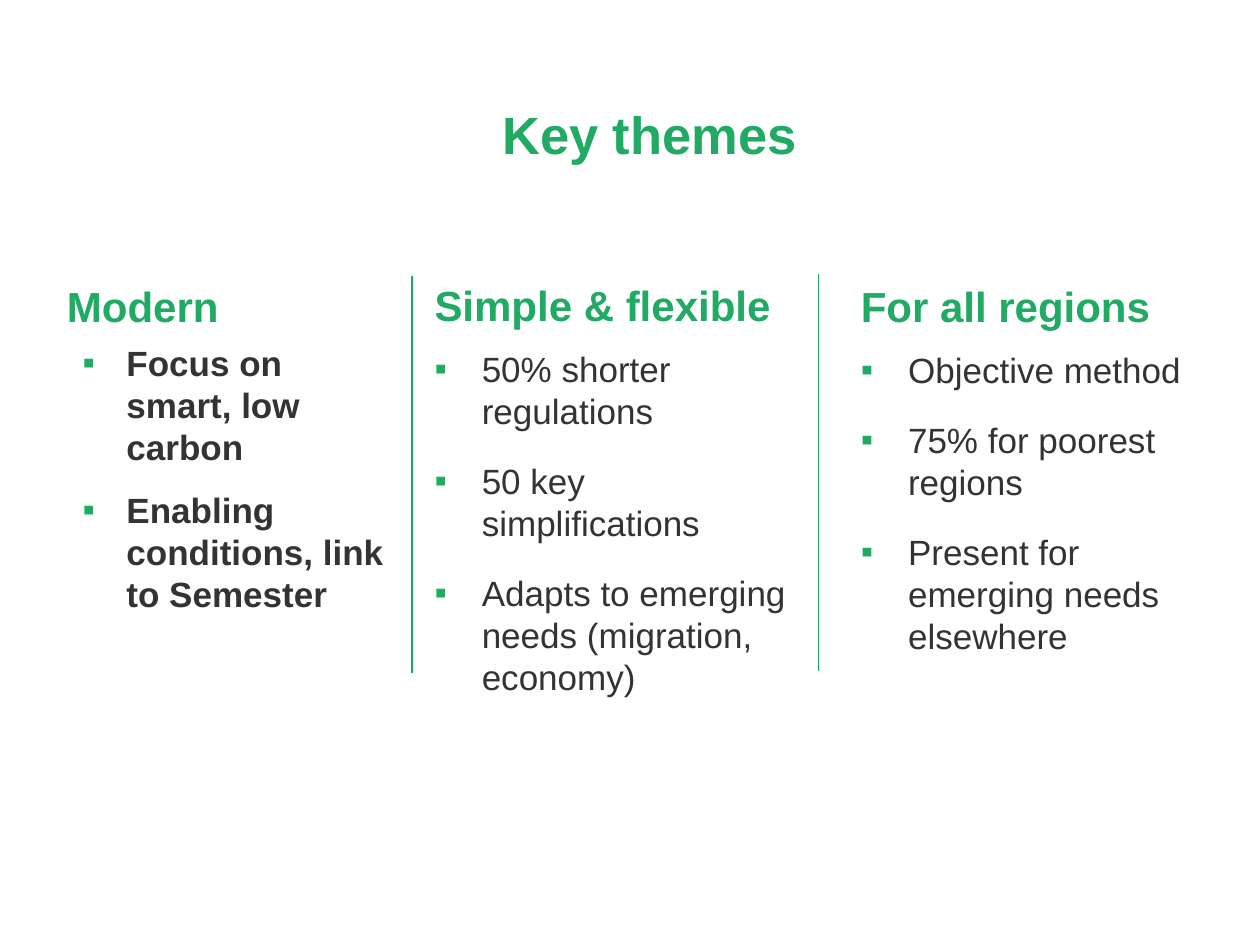
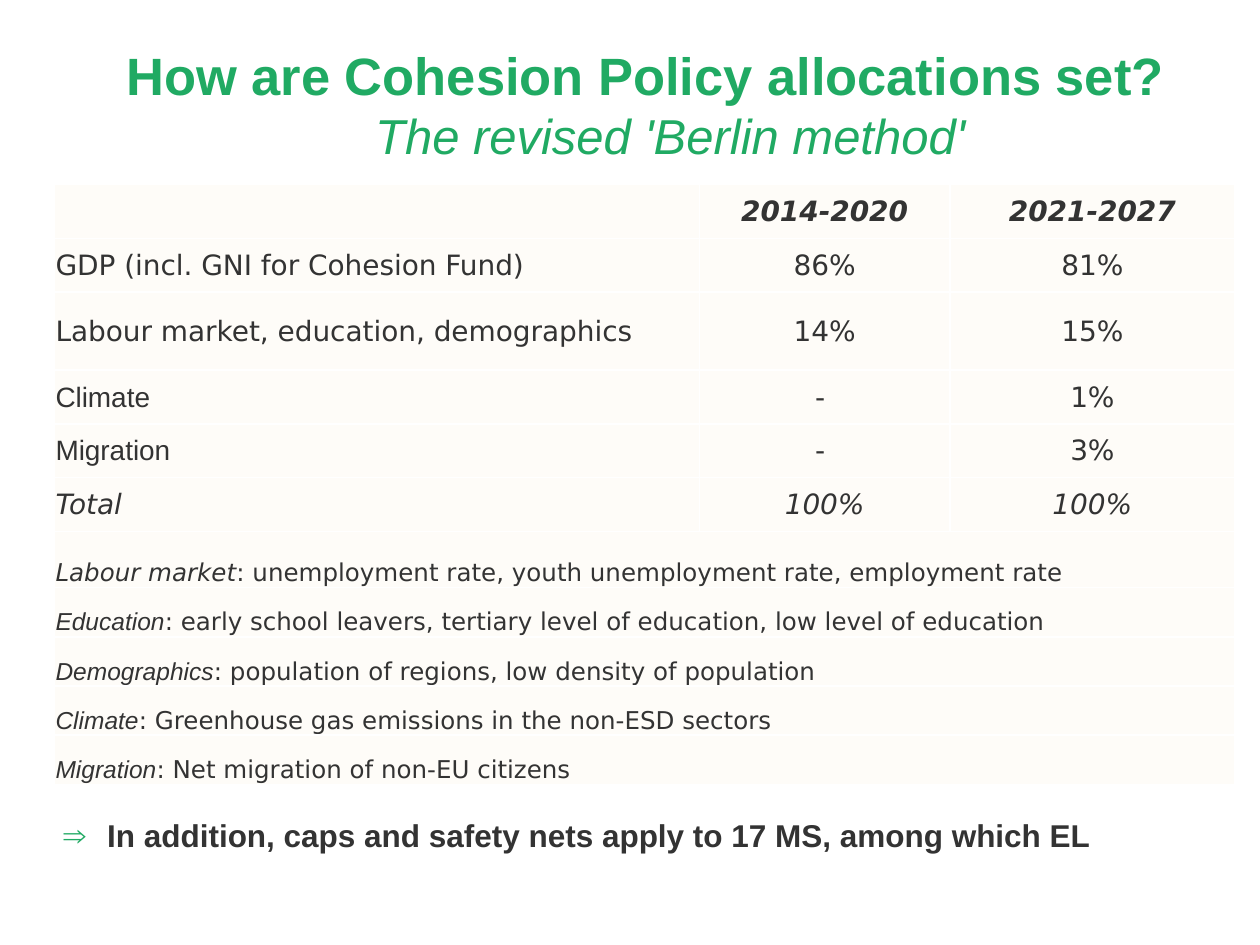
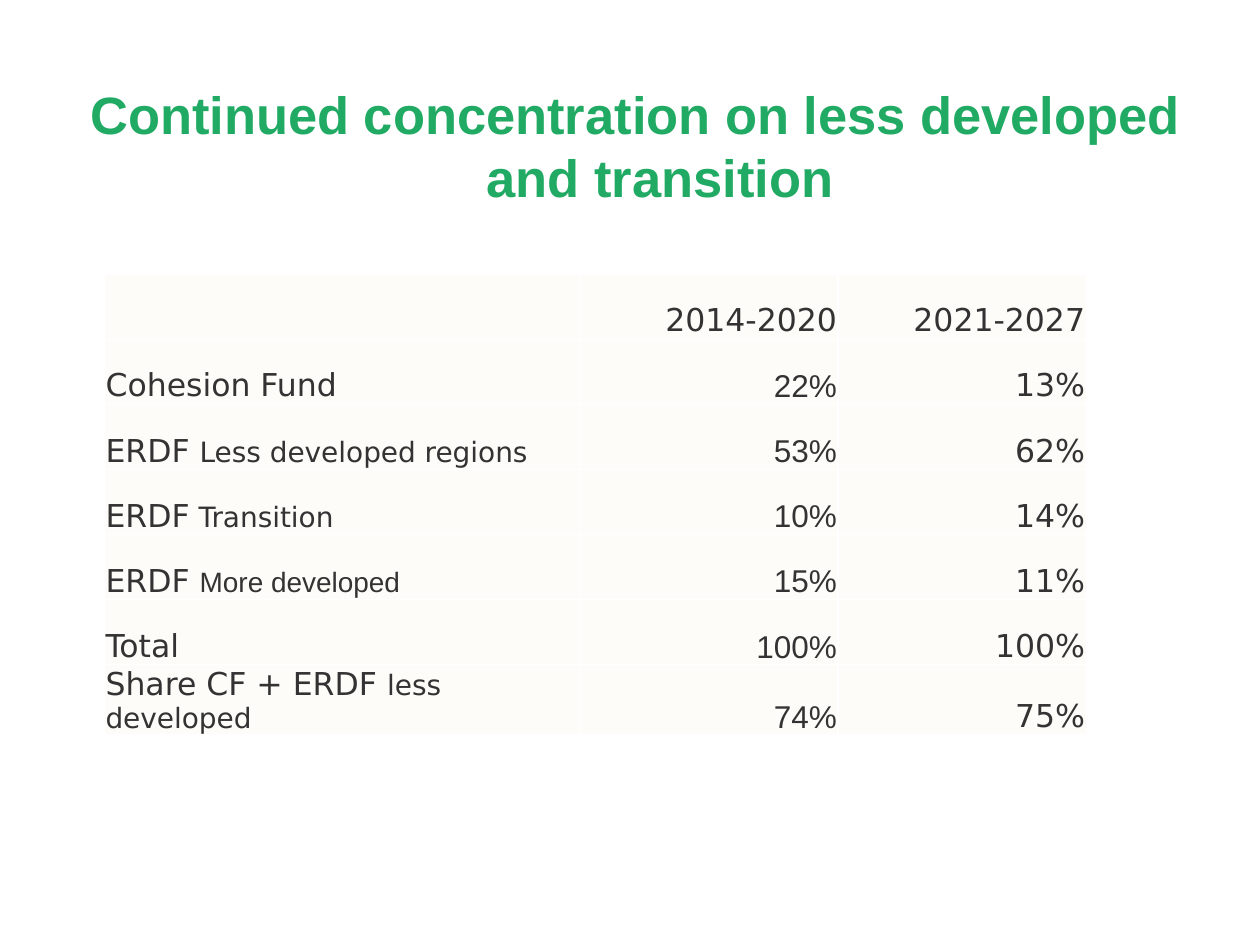
import pptx
import pptx.util
import pptx.dml.color
import pptx.enum.shapes
import pptx.enum.text
import pptx.oxml.ns
from lxml import etree

Pt = pptx.util.Pt
RGBColor = pptx.dml.color.RGBColor
ALIGN = pptx.enum.text.PP_ALIGN
ANCHOR = pptx.enum.text.MSO_ANCHOR
qn = pptx.oxml.ns.qn

GREEN = RGBColor(0x20, 0xAA, 0x63)
RULE = RGBColor(0x1C, 0xAA, 0x61)
GREY = RGBColor(0x33, 0x33, 0x33)
CREAM = RGBColor(0xFE, 0xFC, 0xF8)
WHITE = RGBColor(0xFF, 0xFF, 0xFF)

SANS = "Arial"
WIDE = "DejaVu Sans"

TITLE = {"name": SANS, "size": Pt(30), "bold": True, "italic": False}
SUBTITLE = {"name": SANS, "size": Pt(28), "bold": False, "italic": True}
HEADING = {"name": SANS, "size": Pt(24), "bold": True}
BULLET = {"name": SANS, "size": Pt(20), "bold": False}
STRONG = {**BULLET, "bold": True}
CLOSING = {**STRONG, "size": Pt(18)}

OUTER = {"indent": 27, "hang": 27, "before": 4}
INNER = {"indent": 34, "hang": 25, "before": 0}

CELL = {"name": WIDE, "size": Pt(16), "bold": False, "italic": False}
CELL_SANS = {**CELL, "name": SANS}
CELL_HEAD = {**CELL, "bold": True, "italic": True}
CELL_TOTAL = {**CELL, "italic": True}
NOTE = {**CELL, "size": Pt(14)}
BIG = {**CELL, "size": Pt(18)}
BIG_SANS = {**BIG, "name": SANS}


def set_attrs(obj, values):
    for name, value in values.items():
        setattr(obj, name, value)


def add_run(p, text, fmt, color=GREY):
    r = p.add_run()
    r.text = text
    set_attrs(r.font, fmt)
    r.font.color.rgb = color


def hang(p, indent, first):
    pPr = p._p.get_or_add_pPr()
    pPr.set("marL", str(Pt(indent)))
    pPr.set("indent", str(-Pt(first)))
    return pPr


def add_bullet(p, char, indent, first):
    pPr = hang(p, indent, first)
    clr = etree.SubElement(pPr, qn("a:buClr"))
    etree.SubElement(clr, qn("a:srgbClr"), val=str(GREEN))
    etree.SubElement(pPr, qn("a:buFont"), typeface=SANS)
    etree.SubElement(pPr, qn("a:buChar"), char=char)


def add_slide(prs, box, *lines):
    s = prs.slides.add_slide(prs.slide_layouts[5])
    sp = s.shapes.title
    set_attrs(sp, dict(zip(("left", "top", "width", "height"), map(Pt, box))))
    tf = sp.text_frame
    set_attrs(tf, {"word_wrap": True, "vertical_anchor": ANCHOR.TOP,
                   "auto_size": pptx.enum.text.MSO_AUTO_SIZE.NONE})
    p = tf.paragraphs[0]
    hang(p, 28, 28)
    p.alignment = ALIGN.CENTER
    for i, (text, fmt) in enumerate(lines):
        if i:
            p.add_line_break()
        add_run(p, text, fmt, GREEN)
    return s


def add_text(s, box):
    tf = s.shapes.add_textbox(*map(Pt, box)).text_frame
    tf.word_wrap = True
    return tf


def add_item(p, text, fmt, level, char="▪", before=0):
    add_bullet(p, char, level["indent"], level["hang"])
    set_attrs(p, {"space_before": Pt(before), "space_after": Pt(12)})
    add_run(p, text, fmt)


def add_theme(s, box, heading, items, fmt, level):
    tf = add_text(s, box)
    p = tf.paragraphs[0]
    p.space_after = Pt(6)
    add_run(p, heading, HEADING, GREEN)
    for item in items:
        add_item(tf.add_paragraph(), item, fmt, level, before=level["before"])


def add_rule(s, x, top, bottom):
    line = s.shapes.add_connector(pptx.enum.shapes.MSO_CONNECTOR.STRAIGHT,
                                  Pt(x), Pt(top), Pt(x), Pt(bottom))
    line.line.color.rgb = RULE
    line.line.width = Pt(1)
    etree.SubElement(line._element.spPr, qn("a:effectLst"))


def style_cell(cell, anchor):
    set_attrs(cell, {"margin_left": Pt(0.72), "margin_right": Pt(0.72),
                     "margin_top": Pt(0.72), "margin_bottom": 0,
                     "vertical_anchor": anchor})
    tcPr = cell._tc.get_or_add_tcPr()
    for side in ("lnL", "lnR", "lnT", "lnB"):
        ln = etree.SubElement(tcPr, qn("a:" + side), w=str(Pt(1)))
        fill = etree.SubElement(ln, qn("a:solidFill"))
        etree.SubElement(fill, qn("a:srgbClr"), val=str(WHITE))
    cell.fill.solid()
    cell.fill.fore_color.rgb = CREAM


def add_table(s, left, top, widths, heights, anchor):
    tbl = s.shapes.add_table(len(heights), len(widths), Pt(left), Pt(top),
                             Pt(sum(widths)), Pt(sum(heights))).table
    set_attrs(tbl, {"first_row": False, "horz_banding": False})
    for col, width in zip(tbl.columns, widths):
        col.width = Pt(width)
    for row, height in zip(tbl.rows, heights):
        row.height = Pt(height)
    for cell in tbl.iter_cells():
        style_cell(cell, anchor)
    return tbl


def fill_cell(cell, runs, align=ALIGN.LEFT):
    p = cell.text_frame.paragraphs[0]
    p.alignment = align
    for text, fmt in runs:
        add_run(p, text, fmt)
    return p


def fill_rows(tbl, rows, align):
    for r, (label, *values) in enumerate(rows):
        if label:
            fill_cell(tbl.cell(r, 0), label)
        for c, (text, fmt) in enumerate(values, 1):
            fill_cell(tbl.cell(r, c), [(text, fmt)], align)


def themes_slide(prs):
    s = add_slide(prs, (158.4, 54.7, 425.5, 56.9), ("Key themes", TITLE))
    add_theme(s, (31.2, 157, 198.7, 309), "Modern",
              ["Focus on smart, low carbon",
               "Enabling conditions, link to Semester"], STRONG, INNER)
    add_theme(s, (241.2, 156.3, 221.8, 309), "Simple & flexible",
              ["50% shorter regulations", "50 key simplifications",
               "Adapts to emerging needs (migration, economy)"], BULLET, OUTER)
    add_theme(s, (484.8, 157, 198.7, 309), "For all regions",
              ["Objective method", "75% for poorest regions",
               "Present for emerging needs elsewhere"], BULLET, OUTER)
    add_rule(s, 467.8, 156.7, 383.3)
    add_rule(s, 235.5, 158, 384.5)


def allocations_slide(prs):
    s = add_slide(prs, (48.2, 20.9, 641.5, 90.7),
                  ("How are Cohesion Policy allocations set?", TITLE),
                  ("The revised 'Berlin method'", SUBTITLE))
    tf = add_text(s, (20.2, 463, 623.5, 51))
    add_item(tf.paragraphs[0],
             "In addition, caps and safety nets apply to 17 MS, among which EL",
             CLOSING, INNER, "⇒")

    shares = [
        ("", "2014-2020", "2021-2027", CELL_HEAD, CELL_HEAD),
        ("GDP (incl. GNI for Cohesion Fund)", "86%", "81%", CELL, CELL),
        ("Labour market, education, demographics", "14%", "15%", CELL, CELL),
        ("Climate", "- ", "1%", CELL_SANS, CELL),
        ("Migration", "- ", "3%", CELL_SANS, CELL),
        ("Total", "100%", "100%", CELL_TOTAL, CELL_TOTAL),
    ]
    notes = [
        ("Labour market", WIDE,
         ": unemployment rate, youth unemployment rate, employment rate"),
        ("Education", SANS,
         ": early school leavers, tertiary level of education, low level of education"),
        ("Demographics", SANS, ": population of regions, low density of population"),
        ("Climate", SANS, ": Greenhouse gas emissions in the non-ESD sectors"),
        ("Migration", SANS, ": Net migration of non-EU citizens"),
    ]
    heights = [30.75] * 2 + [44.5] + [30.75] * 3 + [32.2] + [28.1] * 4
    tbl = add_table(s, 31, 105.5, (368.6, 143.3, 162.7), heights, ANCHOR.MIDDLE)
    fill_rows(tbl, [(label and [(label, label_fmt)], (old, fmt), (new, fmt))
                    for label, old, new, label_fmt, fmt in shares], ALIGN.CENTER)
    for r, (term, font, meaning) in enumerate(notes, len(shares)):
        cell = tbl.cell(r, 0)
        cell.merge(tbl.cell(r, 2))
        cell.vertical_anchor = ANCHOR.BOTTOM
        p = fill_cell(cell, [(term, {**NOTE, "name": font, "italic": True}),
                             (meaning, NOTE)])
        p.line_spacing = Pt(6)


def concentration_slide(prs):
    s = add_slide(prs, (42.5, 43.2, 641.5, 79.2),
                  ("Continued concentration on less developed and transition", TITLE))
    funds = [
        ([("Cohesion Fund", BIG)], "22%", "13%"),
        ([("ERDF ", BIG), ("Less developed regions", CELL)], "53%", "62%"),
        ([("ERDF", BIG), (" Transition", CELL)], "10%", "14%"),
        ([("ERDF ", BIG), ("More developed", CELL_SANS)], "15%", "11%"),
        ([("Total", BIG)], "100%", "100%"),
        ([("Share CF + ERDF ", BIG), ("less developed", CELL)], "74%", "75%"),
    ]
    rows = [([], ("2014-2020", BIG), ("2021-2027", BIG))]
    rows += [(label, (old, BIG_SANS), (new, BIG)) for label, old, new in funds]
    tbl = add_table(s, 59.6, 156.7, (272, 147.4, 141.8), [37.2] * len(rows),
                    ANCHOR.BOTTOM)
    fill_rows(tbl, rows, ALIGN.RIGHT)


def main():
    prs = pptx.Presentation()
    set_attrs(prs, {"slide_width": Pt(720), "slide_height": Pt(540)})
    themes_slide(prs)
    allocations_slide(prs)
    concentration_slide(prs)
    prs.save("out.pptx")


if __name__ == "__main__":
    main()
